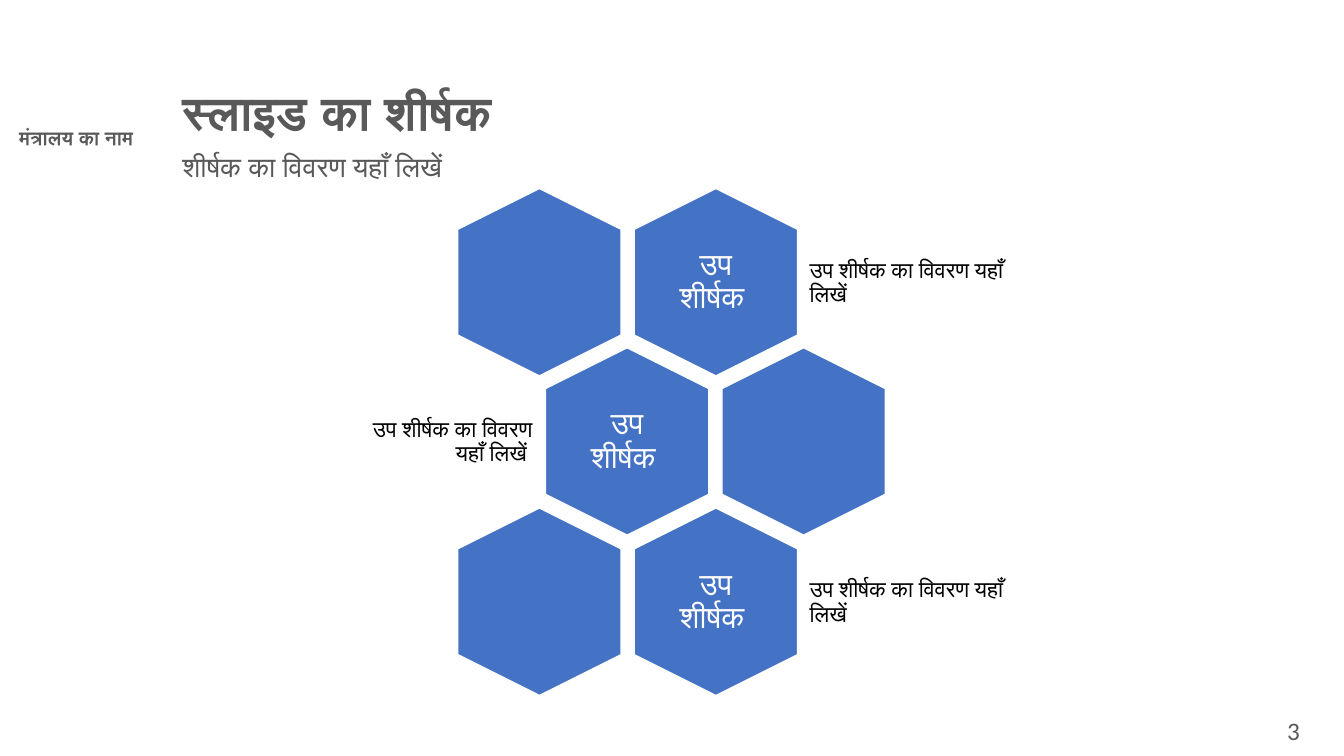
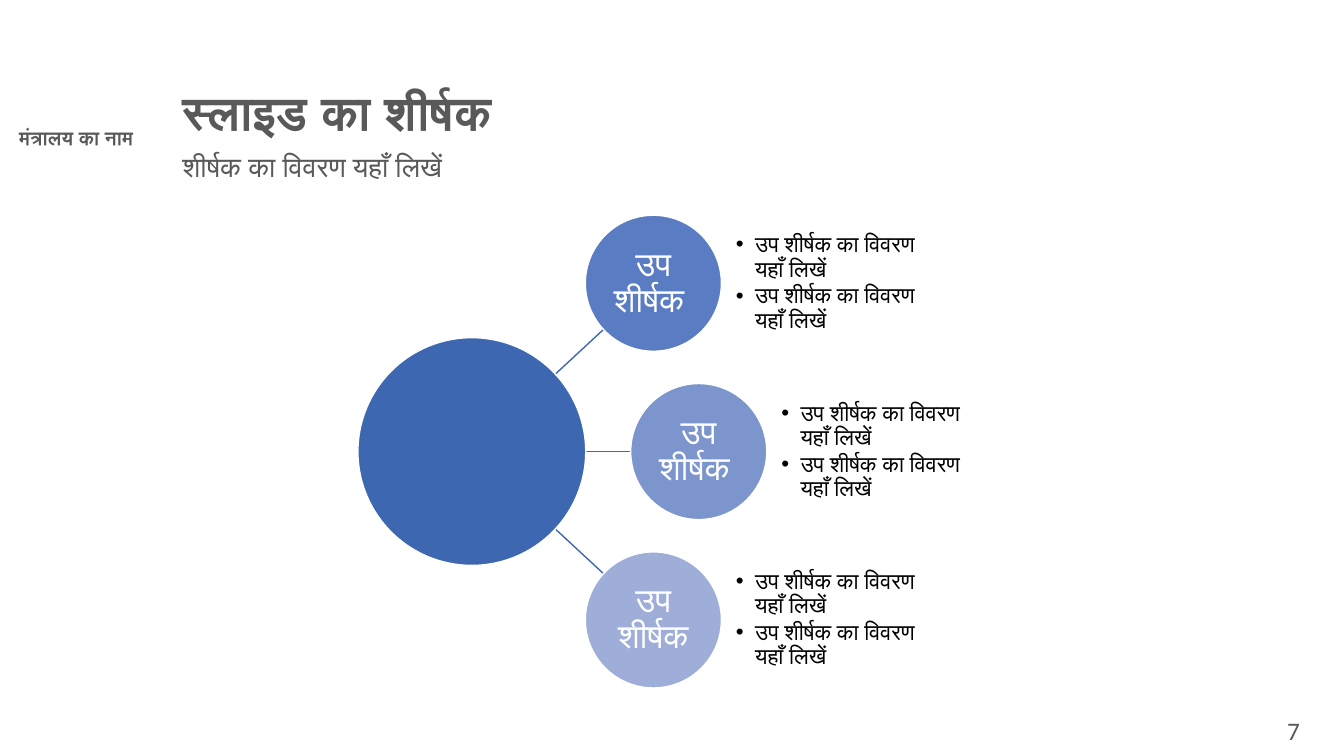
from math import hypot

from lxml.etree import SubElement
from pptx import Presentation
from pptx.dml.color import RGBColor
from pptx.enum.shapes import MSO_CONNECTOR, MSO_SHAPE
from pptx.enum.text import MSO_ANCHOR, PP_ALIGN
from pptx.oxml.ns import qn
from pptx.util import Emu, Pt

PX = 9144  # EMU per px, 100 px to the inch

COLORS = {
    "heading": "595959",
    "body": "000000",
    "white": "FFFFFF",
    "hexagon": "4472C4",
    "hub": "3E67B2",
    "satellites": ("5A7CC3", "7D95CD", "9FAED8"),
}

MINISTRY = "मंत्रालय का नाम"
TITLE = "स्लाइड का शीर्षक"
SUBTITLE = "शीर्षक का विवरण यहाँ लिखें"
LABEL = "उप शीर्षक "
DETAIL = "उप शीर्षक का विवरण यहाँ लिखें"


def px(value):
    return Emu(round(value * PX))


def rgb(color):
    return RGBColor.from_string(color)


def add_bullet(paragraph, indent=19):
    properties = paragraph._p.get_or_add_pPr()
    properties.set("marL", str(px(indent)))
    properties.set("indent", str(px(-indent)))
    SubElement(properties, qn("a:buFont")).set("typeface", "Arial")
    SubElement(properties, qn("a:buChar")).set("char", "•")


def write(shape, lines, size, color, align=PP_ALIGN.LEFT, bold=False,
          font="Calibri", anchor=MSO_ANCHOR.MIDDLE, inset=(7, 7),
          spacing=0.9, bullets=False):
    """Fill a shape with one single-run paragraph per line."""
    frame = shape.text_frame
    frame.word_wrap = True
    frame.vertical_anchor = anchor
    frame.margin_left = frame.margin_right = px(inset[0])
    frame.margin_top = frame.margin_bottom = px(inset[1])
    for index, line in enumerate(lines):
        paragraph = frame.add_paragraph() if index else frame.paragraphs[0]
        if bullets:
            add_bullet(paragraph)
            paragraph.space_after = Pt(2)
        paragraph.alignment = align
        paragraph.line_spacing = spacing
        run = paragraph.add_run()
        run.text = line
        run.font.name = font
        run.font.size = Pt(size)
        run.font.bold = bold
        run.font.color.rgb = rgb(color)


def add_text(slide, box, lines, size, color, **style):
    textbox = slide.shapes.add_textbox(*map(px, box))
    write(textbox, lines, size, color, **style)


def add_figure(slide, preset, center, width, height, fill):
    x, y = center
    figure = slide.shapes.add_shape(
        preset, px(x - width / 2), px(y - height / 2), px(width), px(height))
    figure.shadow.inherit = False
    figure.fill.solid()
    figure.fill.fore_color.rgb = rgb(fill)
    figure.line.color.rgb = rgb(COLORS["white"])
    figure.line.width = Pt(1)
    return figure


def add_spoke(slide, start, end):
    spoke = slide.shapes.add_connector(
        MSO_CONNECTOR.STRAIGHT, *map(px, (*start, *end)))
    spoke.line.color.rgb = rgb(COLORS["hub"])
    spoke.line.width = Pt(1)
    SubElement(spoke._element.spPr, qn("a:effectLst"))


def add_page(deck, number):
    """Blank slide with the shared ministry name, headings and number."""
    slide = deck.slides.add_slide(deck.slide_layouts[6])
    gray = COLORS["heading"]
    heading = {"anchor": MSO_ANCHOR.TOP, "inset": (10, 5)}
    add_text(slide, (0, 123, 151, 35), [MINISTRY], 14, gray, bold=True,
             font="Arial", align=PP_ALIGN.CENTER, **heading)
    add_text(slide, (171, 84, 961, 55), [TITLE], 34, gray, bold=True, **heading)
    add_text(slide, (171, 147, 961, 63), [SUBTITLE], 20, gray, **heading)
    add_text(slide, (1233, 705, 100, 45), [str(number)], 18, gray,
             align=PP_ALIGN.CENTER, spacing=1.0, **heading)
    return slide


def add_honeycomb(slide):
    """Three staggered rows of two hexagons, one labelled in each row."""
    for row in range(3):
        shifted = row % 2
        y = 280 + row * 317 // 2
        for column in range(2):
            x = 535 + 175 * column + 87 * shifted
            hexagon = add_figure(slide, MSO_SHAPE.HEXAGON, (x, y), 186, 162,
                                 COLORS["hexagon"])
            hexagon.rotation = 90
            hexagon.adjustments[0] = 0.25
            if column == shifted:
                continue
            add_text(slide, (x - 56, y - 64, 112, 128), [LABEL], 22,
                     COLORS["white"], align=PP_ALIGN.CENTER, inset=(9, 9))
            # The detail stands on the outer side of the labelled hexagon
            if shifted:
                add_text(slide, (x - 288, y - 55, 201, 112), [DETAIL + " "], 16,
                         COLORS["body"], align=PP_ALIGN.RIGHT)
            else:
                add_text(slide, (x + 86, y - 55, 208, 112), [DETAIL], 16,
                         COLORS["body"])


def add_radial(slide):
    """A hub with three satellites, each followed by its bullets."""
    hub_x, hub_y = hub = (468, 448)
    diameter = 135
    centers = [(648, 281), (693, 448), (648, 615)]

    # Spokes start under the hub and end on the satellite's edge
    for x, y in centers:
        dx, dy = x - hub_x, y - hub_y
        start = 79 / dx
        end = 1 - diameter / 2 / hypot(dx, dy)
        add_spoke(slide, *((hub_x + dx * part, hub_y + dy * part)
                           for part in (start, end)))

    add_figure(slide, MSO_SHAPE.OVAL, hub, 226, 226, COLORS["hub"])

    labels = (LABEL, LABEL, LABEL.strip())
    for (x, y), fill, label in zip(centers, COLORS["satellites"], labels):
        satellite = add_figure(slide, MSO_SHAPE.OVAL, (x, y), diameter,
                               diameter, fill)
        write(satellite, [label], 24, COLORS["white"], align=PP_ALIGN.CENTER,
              inset=(2, 2))
        add_text(slide, (x + 82, y - diameter / 2, 203, diameter),
                 [DETAIL] * 2, 16, COLORS["body"], inset=(0, 0), bullets=True)


def main():
    deck = Presentation()
    deck.slide_width, deck.slide_height = px(1333), px(750)
    add_honeycomb(add_page(deck, 3))
    add_radial(add_page(deck, 7))
    deck.save("out.pptx")


if __name__ == "__main__":
    main()
